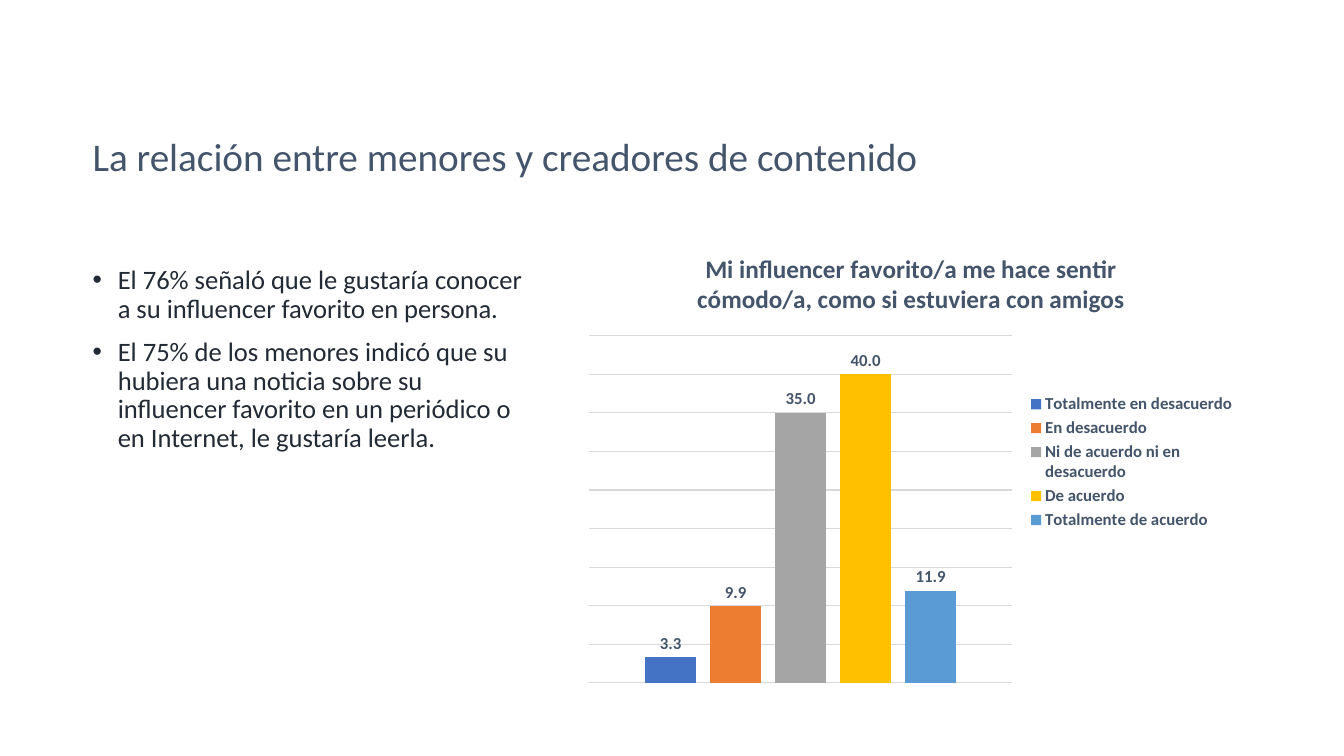
from lxml.etree import SubElement
from pptx import Presentation
from pptx.chart.data import CategoryChartData
from pptx.dml.color import RGBColor
from pptx.enum.chart import XL_CHART_TYPE as ChartType
from pptx.enum.chart import XL_LABEL_POSITION as LabelPosition
from pptx.enum.chart import XL_LEGEND_POSITION as LegendPosition
from pptx.enum.text import MSO_ANCHOR as Anchor
from pptx.oxml.ns import qn
from pptx.util import Inches, Pt

SLATE = "44546A"
INK = "222A35"
GRID = "D9D9D9"
NUMBER_FORMAT = "###0.0"


def style(font, size, color, bold=False):
    font.name = "Calibri"
    font.size = Pt(size)
    font.bold = bold
    font.color.rgb = RGBColor.from_string(color)


def pin(parent, **shares):
    """Fix a chart part at shares of the chart's width and height."""
    layout = parent.get_or_add_layout() if hasattr(parent, "get_or_add_layout") else parent.find(qn("c:layout"))
    if layout is None:
        layout = SubElement(parent, qn("c:layout"))
        parent.insert(0, layout)
    manual = SubElement(layout, qn("c:manualLayout"))
    settings = {"layoutTarget": "inner", "xMode": "edge", "yMode": "edge", **shares}
    for tag, value in settings.items():
        SubElement(manual, qn(f"c:{tag}")).set("val", str(value))


deck = Presentation()
deck.slide_width, deck.slide_height = Inches(13.33), Inches(7.5)
page = deck.slides.add_slide(deck.slide_layouts[6])

# Title
title_box = page.shapes.add_textbox(Inches(0.82), Inches(0.85), Inches(11.5), Inches(1.45))
frame = title_box.text_frame
frame.word_wrap = True
frame.vertical_anchor = Anchor.MIDDLE
para = frame.paragraphs[0]
para.text = "La relación entre menores y creadores de contenido"
para.line_spacing = 0.9
style(para.font, 28, SLATE)

# Findings
findings = [
    "El 76% señaló que le gustaría conocer a su influencer favorito en persona.",
    "El 75% de los menores indicó que su hubiera una noticia sobre su influencer "
    "favorito en un periódico o en Internet, le gustaría leerla.",
]
findings_box = page.shapes.add_textbox(Inches(0.82), Inches(2.6), Inches(4.49), Inches(4.57))
frame = findings_box.text_frame
frame.word_wrap = True
for index, finding in enumerate(findings):
    para = frame.paragraphs[0] if index == 0 else frame.add_paragraph()
    para.text = finding
    para.line_spacing = 0.9
    para.space_before = Pt(10 if index else 0)
    properties = para._p.get_or_add_pPr()
    properties.set("marL", str(Inches(0.25)))
    properties.set("indent", str(-Inches(0.25)))
    SubElement(properties, qn("a:buFont")).set("typeface", "Arial")
    SubElement(properties, qn("a:buChar")).set("char", "•")
    style(para.font, 19, INK)

# Answers chart
answers = [
    ("Totalmente en desacuerdo", 3.3, "4472C4"),
    ("En desacuerdo", 9.9, "ED7D31"),
    ("Ni de acuerdo ni en desacuerdo", 35, "A5A5A5"),
    ("De acuerdo", 40, "FFC000"),
    ("Totalmente de acuerdo", 11.9, "5B9BD5"),
]
data = CategoryChartData(number_format=NUMBER_FORMAT)
data.categories = ["1"]
for name, value, _ in answers:
    data.add_series(name, [value])
chart = page.shapes.add_chart(
    ChartType.COLUMN_CLUSTERED, Inches(5.71), Inches(2.3), Inches(6.65), Inches(4.57), data
).chart
style(chart.font, 10, SLATE, bold=True)

chart.has_title = True
para = chart.chart_title.text_frame.paragraphs[0]
para.text = "Mi influencer favorito/a me hace sentir cómodo/a, como si estuviera con amigos"
style(para.font, 18, SLATE, bold=True)
chart.chart_title.include_in_layout = False

chart.has_legend = True
chart.legend.position = LegendPosition.RIGHT
chart.legend.include_in_layout = False
style(chart.legend.font, 12, SLATE, bold=True)

chart.category_axis.visible = False
value_axis = chart.value_axis
value_axis.visible = False
value_axis.minimum_scale, value_axis.maximum_scale = 0, 45
value_axis.major_unit = 5
value_axis.has_major_gridlines = True
grid_line = value_axis.major_gridlines.format.line
grid_line.color.rgb = RGBColor.from_string(GRID)
grid_line.width = Pt(0.75)

plot = chart.plots[0]
plot.vary_by_categories = False
plot.gap_width = 219
plot.overlap = -27
for series, (_, _, color) in zip(plot.series, answers):
    series.format.fill.solid()
    series.format.fill.fore_color.rgb = RGBColor.from_string(color)
    labels = series.data_labels
    labels.show_value = True
    labels.position = LabelPosition.OUTSIDE_END
    labels.number_format = NUMBER_FORMAT
    labels.number_format_is_linked = False
    style(labels.font, 12, SLATE, bold=True)

pin(chart._chartSpace.chart.plotArea, x=0.02, y=0.226, w=0.631, h=0.753)

deck.save("out.pptx")
